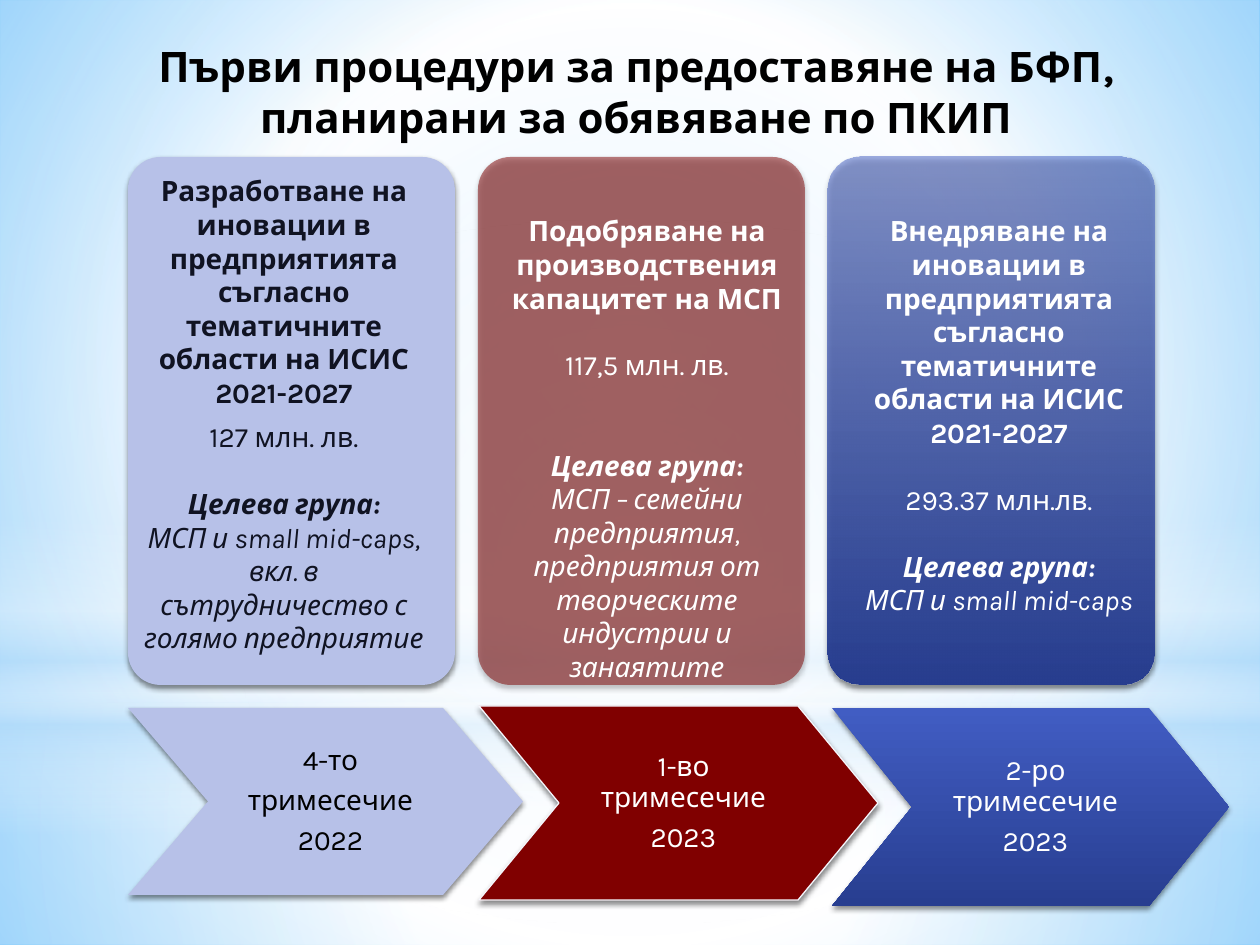
from lxml import etree
from pptx import Presentation
from pptx.dml.color import RGBColor
from pptx.enum.shapes import MSO_SHAPE
from pptx.enum.text import MSO_ANCHOR, PP_ALIGN
from pptx.oxml.ns import qn
from pptx.util import Pt

RECT, OVAL = MSO_SHAPE.RECTANGLE, MSO_SHAPE.OVAL
CARD, CHEVRON = MSO_SHAPE.ROUNDED_RECTANGLE, MSO_SHAPE.CHEVRON
TOP, MIDDLE = MSO_ANCHOR.TOP, MSO_ANCHOR.MIDDLE
CENTER = PP_ALIGN.CENTER

SCALE = 914400 / 126
FONT = "Karla"
NOTCH = 80
COLORS = {
    "white": "FFFFFF", "black": "000000", "ink": "101322", "sky": "B4DCFA",
    "sky_mid": "99D4FE", "sky_deep": "54BDFF", "lilac": "B7C1E8",
    "maroon": "800000", "blue": "415DC3", "navy": "283E90", "edge": "F5F6FC",
}

TITLE = "Първи процедури за предоставяне на БФП, планирани за обявяване по ПКИП"
INNOVATION = "иновации в предприятията съгласно тематичните области на ИСИС 2021-2027"
TARGET = "Целева група:"

BACKGROUND = [(0, "sky_mid", 100), (60, "white", 100), (100, "sky_deep", 100)]
LAYERS = [
    (RECT, (0, 703, 1260, 242), [(0, "white", 91), (37, "white", 76), (100, "sky", 79)], True),
    (RECT, (0, 0, 1260, 703), [(0, "white", 89), (48, "white", 62), (100, "sky", 79)], True),
    (RECT, (0, 519, 1260, 315), [(0, "white", 0), (29, "white", 30), (45, "sky", 40),
                                 (55, "white", 26), (65, "sky", 60), (100, "white", 0)], False),
    (OVAL, (0, 220, 1260, 703), [(0, "white", 100), (56, "white", 0), (100, "white", 0)], True),
]

COLUMNS = [
    {
        "card": [(0, "lilac", 100)], "arrow": [(0, "lilac", 100)], "edge": None,
        "arrow_box": (128, 708, 395, 187), "text_box": (127, 168, 314, 498),
        "ink": "ink", "arrow_ink": "black",
        "name": "Разработване на " + INNOVATION, "budget": "127 млн. лв.",
        "group": "МСП и small mid-caps, вкл. в сътрудничество с голямо предприятие",
        "gaps": (6, 19), "quarter": ["4-то", "тримесечие", "2022"],
    },
    {
        "card": [(0, "maroon", 50)], "arrow": [(0, "maroon", 100)], "edge": "edge",
        "arrow_box": (479, 706, 399, 194), "text_box": (490, 208, 314, 527),
        "ink": "white", "arrow_ink": "white",
        "name": "Подобряване на производствения капацитет на МСП", "budget": "117,5 млн. лв.",
        "group": "МСП – семейни предприятия, предприятия от творческите индустрии и занаятите",
        "gaps": (19, 38), "quarter": ["1-во тримесечие", "2023"],
    },
    {
        "card": [(0, "blue", 50), (100, "navy", 100)],
        "arrow": [(0, "blue", 100), (100, "navy", 100)], "edge": None,
        "arrow_box": (832, 708, 397, 198), "text_box": (842, 208, 314, 459),
        "ink": "white", "arrow_ink": "white",
        "name": "Внедряване на " + INNOVATION, "budget": "293.37 млн.лв.",
        "group": "МСП и small mid-caps",
        "gaps": (19, 19), "quarter": ["2-ро тримесечие", "2023"],
    },
]


def px(value):
    return round(value * SCALE)


def add_color(parent, name, alpha):
    color = etree.SubElement(parent, qn("a:srgbClr"), val=COLORS[name])
    if alpha < 100:
        etree.SubElement(color, qn("a:alpha"), val=str(alpha * 1000))


def paint(fill, element, stops, radial=False):
    if len(stops) == 1:
        _, name, alpha = stops[0]
        fill.solid()
        fill.fore_color.rgb = RGBColor.from_string(COLORS[name])
        if alpha < 100:
            color = element.find(".//" + qn("a:srgbClr"))
            etree.SubElement(color, qn("a:alpha"), val=str(alpha * 1000))
        return
    fill.gradient()
    gradient = element.find(".//" + qn("a:gradFill"))
    for child in list(gradient):
        gradient.remove(child)
    stop_list = etree.SubElement(gradient, qn("a:gsLst"))
    for position, name, alpha in stops:
        stop = etree.SubElement(stop_list, qn("a:gs"), pos=str(position * 1000))
        add_color(stop, name, alpha)
    if radial:
        shade = etree.SubElement(gradient, qn("a:path"), {"path": "circle"})
        etree.SubElement(shade, qn("a:fillToRect"), l="50000", t="50000", r="50000", b="50000")
    else:
        etree.SubElement(gradient, qn("a:lin"), ang="5400000", scaled="0")


def add_shape(page, kind, box, stops, radial=False, edge=None, shadow=False):
    shape = page.shapes.add_shape(kind, *map(px, box))
    shape.shadow.inherit = False
    paint(shape.fill, shape._element.spPr, stops, radial)
    if edge:
        shape.line.color.rgb = RGBColor.from_string(COLORS[edge])
        shape.line.width = Pt(0.75)
    else:
        shape.line.fill.background()
    if shadow:
        effects = shape._element.spPr.find(qn("a:effectLst"))
        outer = etree.SubElement(effects, qn("a:outerShdw"), blurRad=str(Pt(3.1)),
                                 dist=str(Pt(1.8)), dir="5400000", rotWithShape="0")
        add_color(outer, "black", 45)
    return shape


def write(shape, lines, size, color, margins=(13, 6, 13, 6), anchor=TOP, spacing=1.0):
    frame = shape.text_frame
    frame.word_wrap = True
    frame.vertical_anchor = anchor
    frame.margin_left, frame.margin_top, frame.margin_right, frame.margin_bottom = map(px, margins)
    frame.text = "\n".join(line[0] for line in lines)
    for para, (_, bold, italic, gap) in zip(frame.paragraphs, lines):
        para.alignment = CENTER
        para.line_spacing = spacing
        para.space_before = Pt(gap)
        font = para.runs[0].font
        font.name, font.size, font.bold, font.italic = FONT, Pt(size), bold, italic
        font.color.rgb = RGBColor.from_string(COLORS[color])


def add_column(page, index, column):
    card = add_shape(page, CARD, (128 + 350 * index, 157, 327, 528), column["card"], shadow=True)
    card.adjustments[0] = 0.1

    arrow = add_shape(page, CHEVRON, column["arrow_box"], column["arrow"],
                      edge=column["edge"], shadow=True)
    arrow.adjustments[0] = NOTCH / column["arrow_box"][3]
    quarter = [(text, False, False, 5.6 if i else 0) for i, text in enumerate(column["quarter"])]
    write(arrow, quarter, 16, column["arrow_ink"], (20, 5, 10, 5), MIDDLE, 0.9)

    budget_gap, target_gap = column["gaps"]
    lines = [
        (column["name"], True, False, 0),
        (column["budget"], False, False, budget_gap),
        (TARGET, True, True, target_gap),
        (column["group"], False, True, 0),
    ]
    write(page.shapes.add_textbox(*map(px, column["text_box"])), lines, 16, column["ink"])


def main():
    deck = Presentation()
    deck.slide_width, deck.slide_height = px(1260), px(945)
    page = deck.slides.add_slide(deck.slide_layouts[6])
    paint(page.background.fill, page._element, BACKGROUND, True)
    for kind, box, stops, radial in LAYERS:
        add_shape(page, kind, box, stops, radial)
    title = page.shapes.add_textbox(*map(px, (127, 35, 1018, 88)))
    write(title, [(TITLE, True, False, 0)], 24, "black")
    for index, column in enumerate(COLUMNS):
        add_column(page, index, column)
    deck.save("out.pptx")


if __name__ == "__main__":
    main()
